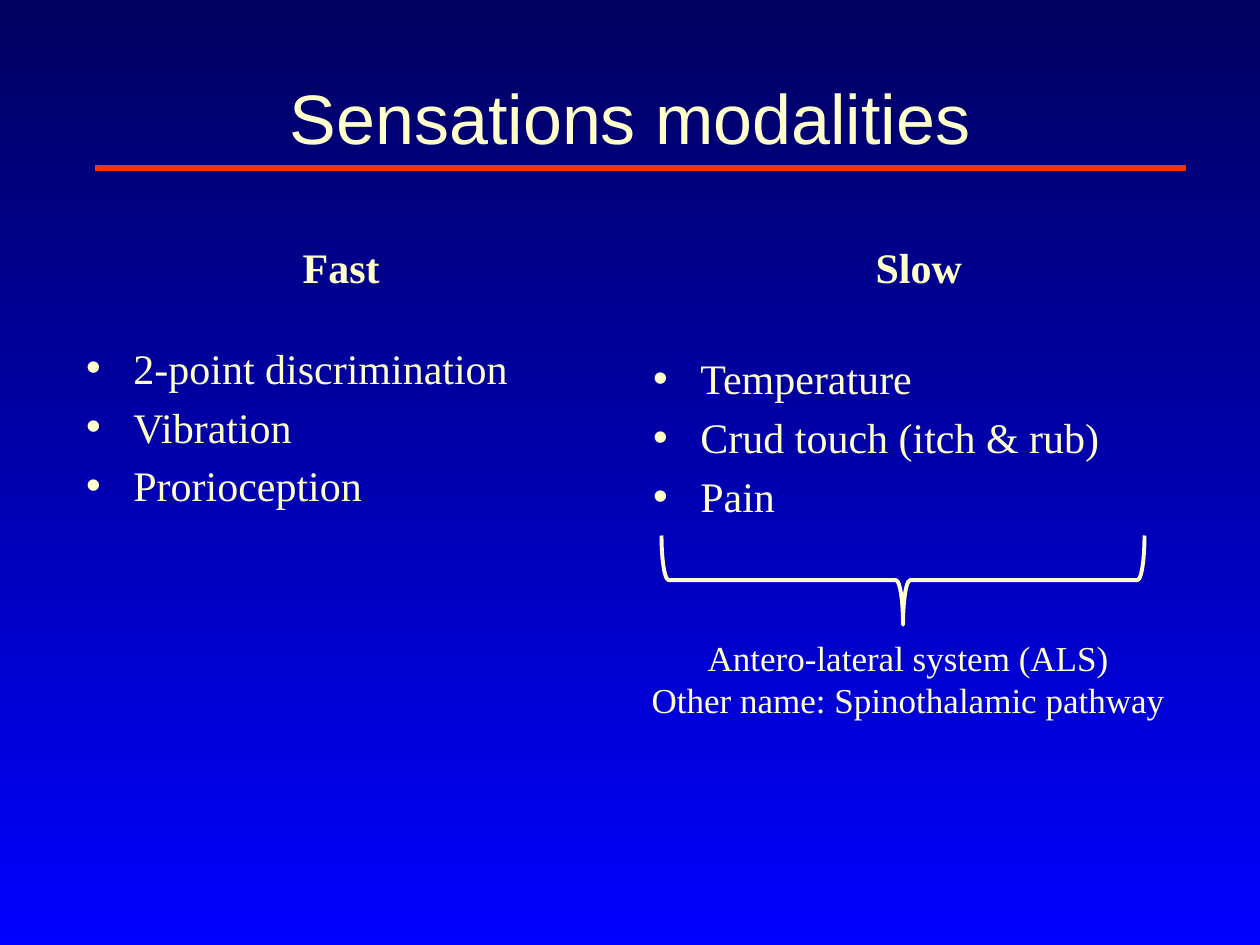
from lxml.etree import SubElement
from pptx import Presentation
from pptx.dml.color import RGBColor
from pptx.enum.shapes import MSO_CONNECTOR, MSO_SHAPE
from pptx.enum.text import MSO_ANCHOR, MSO_AUTO_SIZE, PP_ALIGN
from pptx.oxml.ns import qn
from pptx.util import Pt

CREAM = RGBColor(0xFF, 0xFF, 0xCC)
RED = RGBColor(0xFF, 0x33, 0x00)
NAVY = RGBColor(0x00, 0x00, 0x5E)
BLUE = RGBColor(0x00, 0x00, 0xFF)
SERIF = "Times New Roman"
WIDTH = 318


def place(shape, box):
    """Move a shape to a box of left, top, width and height in points."""
    shape.left, shape.top, shape.width, shape.height = map(Pt, box)


def write(shape, text, size, font=SERIF, bold=False, align=None, anchor=MSO_ANCHOR.TOP, gap=0):
    """Fill a shape with text and format all its paragraphs."""
    frame = shape.text_frame
    frame.text = text
    frame.word_wrap = True
    frame.auto_size = MSO_AUTO_SIZE.NONE
    frame.vertical_anchor = anchor
    for para in frame.paragraphs:
        para.alignment = align
        para.space_before = Pt(gap)
        for run in para.runs:
            run.font.name = font
            run.font.size = Pt(size)
            run.font.bold = bold
            run.font.color.rgb = CREAM


def paint(slide):
    """Give the slide its blue gradient background."""
    fill = slide.background.fill
    fill.gradient()
    fill.gradient_angle = 270
    for stop, color in zip(fill.gradient_stops, (NAVY, BLUE)):
        stop.color.rgb = color
        stop.position = 0 if color == NAVY else 1


def add_head(slide, box, text):
    """Place the title and the red rule across its lower part."""
    left, top, width, height = box
    title = slide.shapes.title
    place(title, box)
    write(title, text, 40, "Arial", align=PP_ALIGN.CENTER, anchor=MSO_ANCHOR.MIDDLE)
    level = Pt(top + height - 15.6)
    rule = slide.shapes.add_connector(
        MSO_CONNECTOR.STRAIGHT, Pt(left + 18), level, Pt(left + width - 6), level)
    rule.line.color.rgb = RED
    rule.line.width = Pt(3)
    SubElement(rule._element.spPr, qn("a:effectLst"))


def add_list(label, body, head, box, name, items):
    """Place a bold column heading and the bulleted list below it."""
    place(label, head)
    write(label, name, 24, bold=True, align=PP_ALIGN.CENTER, anchor=MSO_ANCHOR.BOTTOM, gap=4.8)
    place(body, box)
    write(body, "\n".join(items), 24, gap=4.8)


def add_note(slide, box, text):
    """Place a brace opening upward and the centred note under it."""
    left, top, width, height = box
    span, depth = 276, 51
    mid, level = left + 156, top - 28.5
    brace = slide.shapes.add_shape(MSO_SHAPE.RIGHT_BRACE, 0, 0, 0, 0)
    place(brace, (mid - depth / 2, level - span / 2, depth, span))
    brace.rotation = 90
    brace.adjustments[0] = 0.08
    brace.shadow.inherit = False
    brace.fill.background()
    brace.line.color.rgb = CREAM
    brace.line.width = Pt(2.25)
    note = slide.shapes.add_textbox(*map(Pt, box))
    write(note, text, 20, align=PP_ALIGN.CENTER)


def main():
    """Build the slide and save it."""
    deck = Presentation()
    deck.slide_width, deck.slide_height = Pt(720), Pt(540)
    slide = deck.slides.add_slide(deck.slide_layouts[4])
    paint(slide)
    add_head(slide, (36, 21.6, 648, 90), "Sensations modalities")
    hold = slide.placeholders
    add_list(hold[1], hold[2], (36, 120, WIDTH, 50.4), (42, 192, WIDTH, 311), "Fast",
             ["2-point discrimination", "Vibration", "Prorioception"])
    add_list(hold[3], hold[4], (366, 120, WIDTH, 50.4), (366, 198, WIDTH, 311), "Slow",
             ["Temperature", "Crud touch (itch & rub)", "Pain"])
    add_note(slide, (360, 360, WIDTH, 55.8),
             "Antero-lateral system (ALS)\nOther name: Spinothalamic pathway")
    deck.save("out.pptx")


if __name__ == "__main__":
    main()
